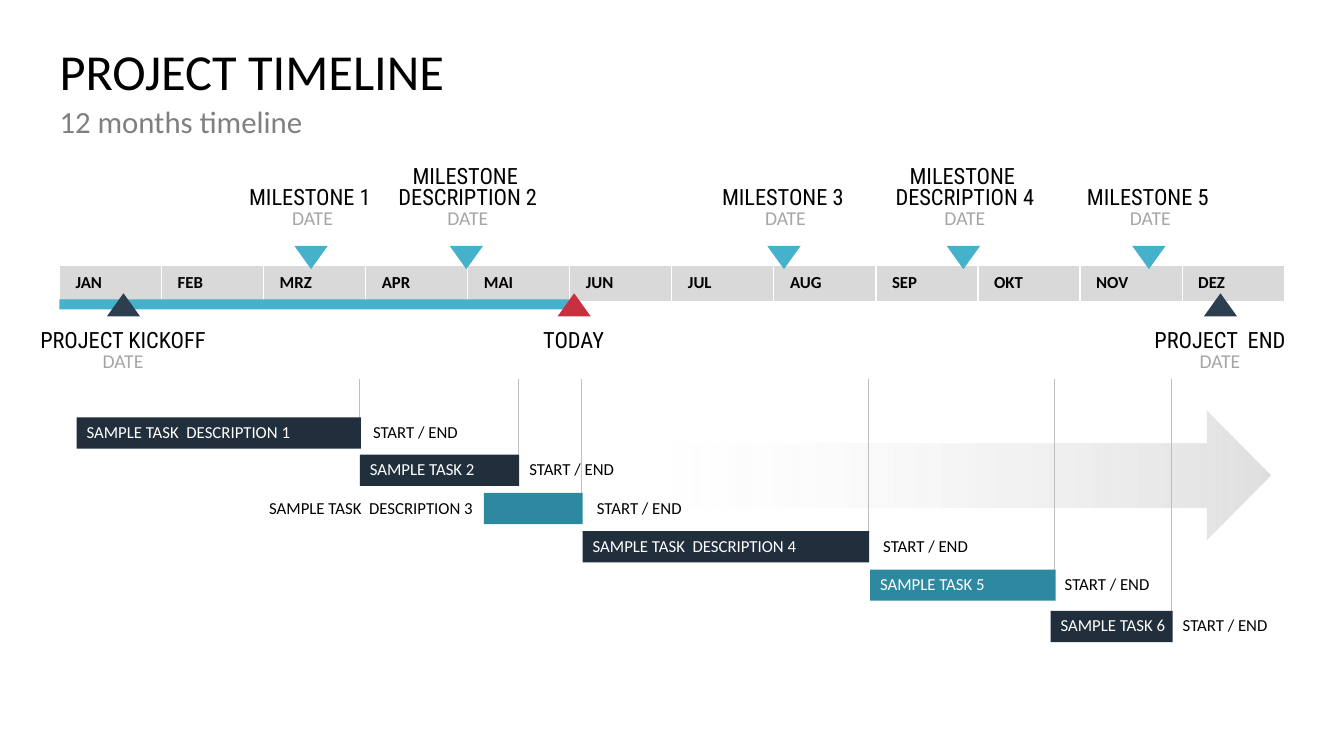
import dataclasses

import lxml.etree
import pptx
import pptx.dml.color
import pptx.enum.shapes
import pptx.enum.text
import pptx.oxml.ns
import pptx.util

Inches = pptx.util.Inches
Shape = pptx.enum.shapes.MSO_SHAPE
Align = pptx.enum.text.PP_ALIGN
Anchor = pptx.enum.text.MSO_ANCHOR
qn = pptx.oxml.ns.qn


@dataclasses.dataclass(frozen=True)
class Theme:
    body_font: str = "Calibri"
    label_font: str = "Roboto Condensed"
    black: str = "000000"
    white: str = "FFFFFF"
    subtitle: str = "808080"
    date: str = "A6A6A6"
    month: str = "D9D9D9"
    guide: str = "BFBFBF"
    arrow: str = "979797"
    sky: str = "45B1CB"
    teal: str = "2D899F"
    navy: str = "212E3C"
    slate: str = "2C3E50"
    red: str = "C8303F"
    title_size: int = 36
    subtitle_size: int = 22
    label_size: int = 16
    date_size: int = 14
    task_size: int = 12


def rgb(color):
    return pptx.dml.color.RGBColor.from_string(color)


class TimelineSlide:
    def __init__(self, deck, theme):
        self.theme = theme
        self.page = deck.slides.add_slide(deck.slide_layouts[5])
        self.shapes = self.page.shapes

    def style(self, span, size, color, font=None, bold=False):
        span.font.size = pptx.util.Pt(size)
        span.font.name = font or self.theme.body_font
        span.font.color.rgb = rgb(color)
        span.font.bold = bold

    def fill_text(self, box, text, size, color, align=Align.LEFT, anchor=Anchor.TOP,
                  inset=0, wrap=True, spacing=0.9, font=None):
        frame = box.text_frame
        frame.word_wrap = wrap
        frame.auto_size = pptx.enum.text.MSO_AUTO_SIZE.NONE
        frame.vertical_anchor = anchor
        frame.margin_left = frame.margin_right = Inches(inset)
        frame.margin_top = frame.margin_bottom = Inches(inset / 2)
        para = frame.paragraphs[0]
        para.text = text
        para.alignment = align
        para.line_spacing = spacing
        for span in para.runs:
            self.style(span, size, color, font)
        return para

    def title(self, text, left, top, width, height):
        box = self.shapes.title
        box.left, box.top = Inches(left), Inches(top)
        box.width, box.height = Inches(width), Inches(height)
        self.fill_text(box, text, self.theme.title_size, self.theme.black)

    def text(self, text, left, top, width, height, size, color, **options):
        box = self.shapes.add_textbox(Inches(left), Inches(top), Inches(width), Inches(height))
        return self.fill_text(box, text, size, color, **options)

    def shape(self, kind, left, top, width, height, color=None):
        box = self.shapes.add_shape(kind, Inches(left), Inches(top), Inches(width), Inches(height))
        box.shadow.inherit = False
        box.line.fill.background()
        if color:
            box.fill.solid()
            box.fill.fore_color.rgb = rgb(color)
        return box

    def fading_arrow(self, left, top, width, height):
        arrow = self.shape(Shape.RIGHT_ARROW, left, top, width, height)
        arrow.fill.gradient()
        arrow.fill.gradient_angle = 0
        fade = ((0.43, self.theme.white, 0), (1, self.theme.arrow, 30))
        for stop, (position, color, _) in zip(arrow.fill.gradient_stops, fade):
            stop.position = position
            stop.color.rgb = rgb(color)
        colors = arrow._element.spPr.find(qn("a:gradFill")).iter(qn("a:srgbClr"))
        for color, (_, _, opacity) in zip(colors, fade):
            lxml.etree.SubElement(color, qn("a:alpha")).set("val", str(opacity * 1000))

    def guide(self, x, top, bottom):
        line = self.shapes.add_connector(pptx.enum.shapes.MSO_CONNECTOR.STRAIGHT,
                                         Inches(x), Inches(top), Inches(x), Inches(bottom))
        line.line.color.rgb = rgb(self.theme.guide)
        line.line.width = pptx.util.Pt(0.75)
        lxml.etree.SubElement(line._element.spPr, qn("a:effectLst"))

    def months(self, names, left, top, width, height):
        table = self.shapes.add_table(1, len(names), Inches(left), Inches(top),
                                      Inches(width), Inches(height)).table
        table.first_row = table.horz_banding = False
        table.rows[0].height = Inches(height)
        for column, name in enumerate(names):
            table.columns[column].width = Inches(width / len(names))
            cell = table.cell(0, column)
            cell.text = name
            cell.vertical_anchor = Anchor.MIDDLE
            cell.margin_left, cell.margin_right = Inches(0.16), Inches(0.01)
            cell.margin_top = cell.margin_bottom = Inches(0.06)
            cell.fill.solid()
            cell.fill.fore_color.rgb = rgb(self.theme.month)
            self.style(cell.text_frame.paragraphs[0].runs[0],
                       self.theme.task_size, self.theme.black, bold=True)
            properties = cell._tc.get_or_add_tcPr()
            for place, side in enumerate(("a:lnL", "a:lnR")):
                border = lxml.etree.Element(qn(side), w="12700")
                paint = lxml.etree.SubElement(border, qn("a:solidFill"))
                lxml.etree.SubElement(paint, qn("a:srgbClr")).set("val", self.theme.white)
                properties.insert(place, border)

    def marker_label(self, text, center, top, height, anchor):
        para = self.text(text, center - 0.85, top, 1.7, height, self.theme.label_size,
                         self.theme.black, align=Align.CENTER, anchor=anchor,
                         spacing=0.8, font=self.theme.label_font)
        for line_break in para._p.findall(qn("a:br")):
            size = str(self.theme.label_size * 100)
            lxml.etree.SubElement(line_break, qn("a:rPr")).set("sz", size)
        if para.runs[-1].text == "DATE":
            self.style(para.runs[-1], self.theme.date_size, self.theme.date)

    def milestone(self, text, center):
        self.marker_label(text, center, 1.65, 0.62, Anchor.BOTTOM)
        pointer = self.shape(Shape.ISOSCELES_TRIANGLE, center - 0.18, 2.44, 0.33, 0.23,
                             self.theme.sky)
        pointer.rotation = 180

    def checkpoint(self, text, center, color):
        self.shape(Shape.ISOSCELES_TRIANGLE, center - 0.16, 2.91, 0.33, 0.23, color)
        self.marker_label(text, center, 3.29, 0.4, Anchor.TOP)

    def task(self, name, left, top, width, color, dates_left, outside=False):
        size, height = self.theme.task_size, 0.31
        bar = self.shape(Shape.RECTANGLE, left, top, width, height, color)
        options = dict(anchor=Anchor.MIDDLE, inset=0.1, wrap=False)
        if outside:
            self.text(name, left - 2.29, top, 2.28, height, size, self.theme.black,
                      align=Align.RIGHT, **options)
        else:
            self.fill_text(bar, name, size, self.theme.white, **options)
        self.text("START / END", dates_left, top, 1.01, height, size, self.theme.black,
                  anchor=Anchor.MIDDLE)


def main():
    deck = pptx.Presentation()
    deck.slide_width, deck.slide_height = Inches(13.33), Inches(7.5)
    theme = Theme()
    slide = TimelineSlide(deck, theme)
    left, width = 0.59, 12.15

    slide.months("JAN FEB MRZ APR MAI JUN JUL AUG SEP OKT NOV DEZ".split(),
                 left, 2.63, width, 0.36)
    slide.title("PROJECT TIMELINE", left, 0.47, width, 0.59)
    slide.text("12 months timeline", left, 1.06, width, 0.59,
               theme.subtitle_size, theme.subtitle)

    for text, center in (
        ("MILESTONE 1 \nDATE", 3.1),
        ("MILESTONE \nDESCRIPTION 2\nDATE", 4.64),
        ("MILESTONE 3 \nDATE", 7.79),
        ("MILESTONE \nDESCRIPTION 4\nDATE", 9.57),
        ("MILESTONE 5 \nDATE", 11.41),
    ):
        slide.milestone(text, center)

    slide.shape(Shape.RECTANGLE, left, 2.97, 5.1, 0.1, theme.sky)
    slide.fading_arrow(0.75, 4.07, 11.85, 1.28)

    for text, center, color in (
        ("PROJECT KICKOFF\nDATE", 1.22, theme.slate),
        ("PROJECT  END\nDATE", 12.1, theme.slate),
        ("TODAY", 5.69, theme.red),
    ):
        slide.checkpoint(text, center, color)

    tasks = (
        ("SAMPLE TASK  DESCRIPTION 1", 0.76, 4.14, 2.82, theme.navy, 3.7),
        ("SAMPLE TASK 2", 3.57, 4.51, 1.58, theme.navy, 5.25),
        ("SAMPLE TASK  DESCRIPTION 3", 4.8, 4.89, 0.98, theme.teal, 5.92, True),
        ("SAMPLE TASK  DESCRIPTION 4", 5.78, 5.27, 2.84, theme.navy, 8.76),
        ("SAMPLE TASK 5", 8.63, 5.65, 1.84, theme.teal, 10.56),
        ("SAMPLE TASK 6", 10.42, 6.06, 1.21, theme.navy, 11.73),
    )
    for _, start, top, length, *_ in tasks:
        slide.guide(start + length - 0.01, 3.76, top + 0.15)
    for task in tasks:
        slide.task(*task)

    deck.save("out.pptx")


if __name__ == "__main__":
    main()
